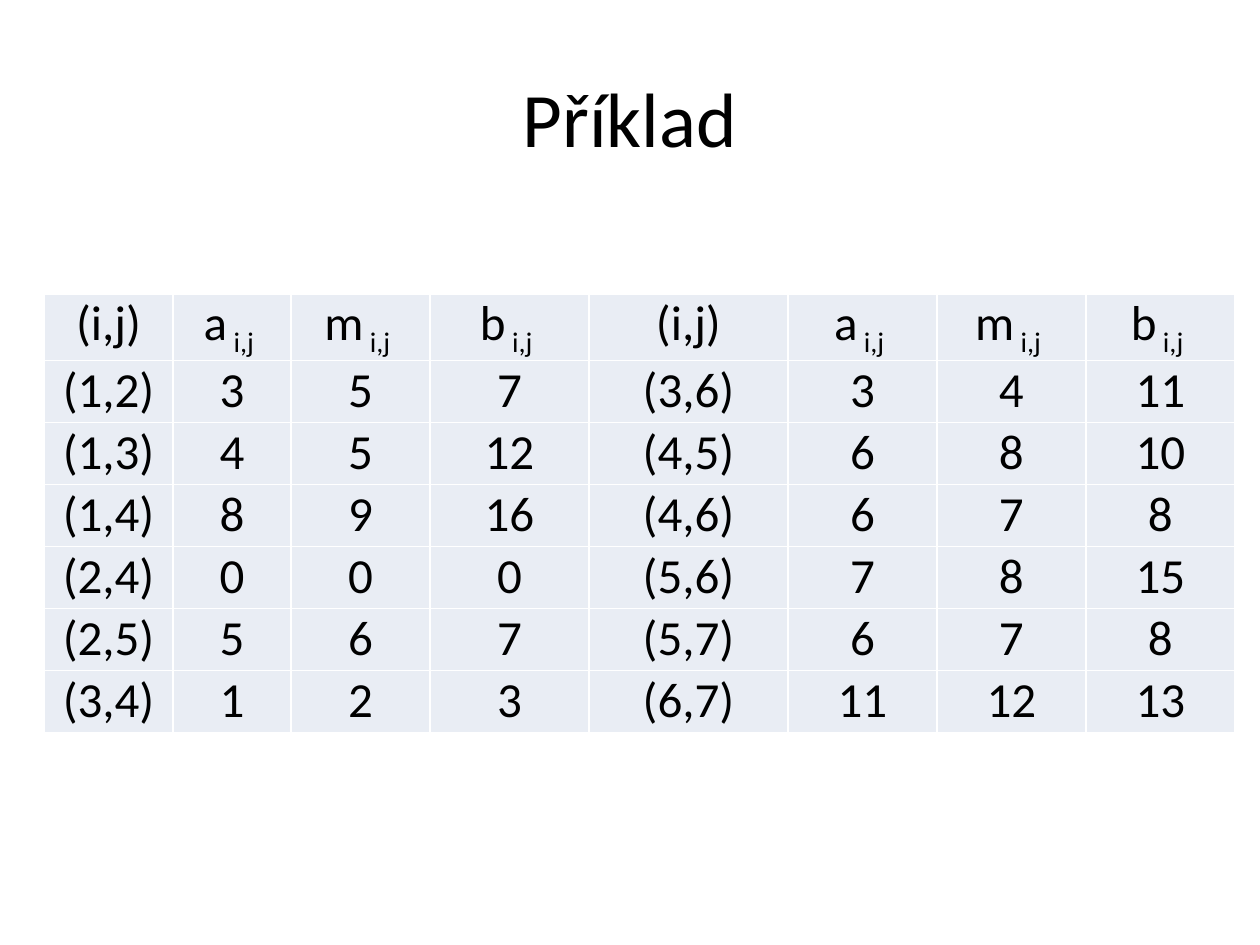
from typing import NamedTuple

from pptx import Presentation
from pptx import util as u
from pptx.dml.color import RGBColor
from pptx.enum import text

BLACK = RGBColor(0x00, 0x00, 0x00)
CELL_FILL = RGBColor(0xE9, 0xED, 0xF4)
FONT = "Calibri"
PX_PER_INCH = 126
SUBSCRIPT = " i,j "


class Box(NamedTuple):
    left: int
    top: int
    width: int
    height: int


class Estimate(NamedTuple):
    """An activity (i,j) with its optimistic, likely and pessimistic times."""
    activity: str
    a: int
    m: int
    b: int


SLIDE = Box(0, 0, 1260, 945)
TITLE = Box(63, 38, 1134, 158)
TABLE_LEFT, TABLE_TOP, ROW_HEIGHT = 44, 294, 62
COLUMN_WIDTHS = [129, 118, 139, 159, 199, 149, 149, 149]
HEADER = ["(i,j)", "a", "m", "b"]
LEFT_HALF = [
    Estimate("(1,2)", 3, 5, 7),
    Estimate("(1,3)", 4, 5, 12),
    Estimate("(1,4)", 8, 9, 16),
    Estimate("(2,4)", 0, 0, 0),
    Estimate("(2,5)", 5, 6, 7),
    Estimate("(3,4)", 1, 2, 3),
]
RIGHT_HALF = [
    Estimate("(3,6)", 3, 4, 11),
    Estimate("(4,5)", 6, 8, 10),
    Estimate("(4,6)", 6, 7, 8),
    Estimate("(5,6)", 7, 8, 15),
    Estimate("(5,7)", 6, 7, 8),
    Estimate("(6,7)", 11, 12, 13),
]
CELL_FORMAT = {
    "margin_left": u.Inches(0.05),
    "margin_right": u.Inches(0.05),
    "margin_top": 0,
    "margin_bottom": 0,
}


def px(length: int) -> u.Emu:
    return u.Emu(round(length * u.Inches(1) / PX_PER_INCH))


def set_format(target, values: dict) -> None:
    for name, value in values.items():
        setattr(target, name, value)


def add_run(p, content: str, size: int):
    r = p.add_run()
    r.text = content
    set_format(r.font, {"name": FONT, "size": u.Pt(size)})
    r.font.color.rgb = BLACK
    return r


def add_title(s, box: Box, content: str) -> None:
    sp = s.shapes.title
    set_format(sp, {name: px(value) for name, value in box._asdict().items()})
    tf = sp.text_frame
    tf.vertical_anchor = text.MSO_ANCHOR.MIDDLE
    p = tf.paragraphs[0]
    p.alignment = text.PP_ALIGN.CENTER
    add_run(p, content, 44)


def fill_cell(cell, content: str, subscript: str = "") -> None:
    cell.fill.solid()
    cell.fill.fore_color.rgb = CELL_FILL
    set_format(cell, CELL_FORMAT)
    p = cell.text_frame.paragraphs[0]
    p.alignment = text.PP_ALIGN.CENTER
    add_run(p, content, 28)
    if subscript:
        r = add_run(p, subscript, 28)
        r.font._element.set("baseline", "-25000")


def add_estimates(s) -> None:
    rows = [HEADER * 2] + [left + right for left, right in zip(LEFT_HALF, RIGHT_HALF)]
    frame = s.shapes.add_table(
        len(rows), len(COLUMN_WIDTHS), px(TABLE_LEFT), px(TABLE_TOP),
        px(sum(COLUMN_WIDTHS)), px(ROW_HEIGHT * len(rows)))
    table = frame.table
    set_format(table, {"first_row": False, "horz_banding": False})
    for column, width in zip(table.columns, COLUMN_WIDTHS):
        column.width = px(width)
    for i, values in enumerate(rows):
        table.rows[i].height = px(ROW_HEIGHT)
        for j, value in enumerate(values):
            has_subscript = i == 0 and value != HEADER[0]
            fill_cell(table.cell(i, j), str(value), SUBSCRIPT if has_subscript else "")


def main() -> None:
    prs = Presentation()
    prs.slide_width, prs.slide_height = px(SLIDE.width), px(SLIDE.height)
    s = prs.slides.add_slide(prs.slide_layouts[5])
    add_title(s, TITLE, "Příklad")
    add_estimates(s)
    prs.save("out.pptx")


if __name__ == "__main__":
    main()
